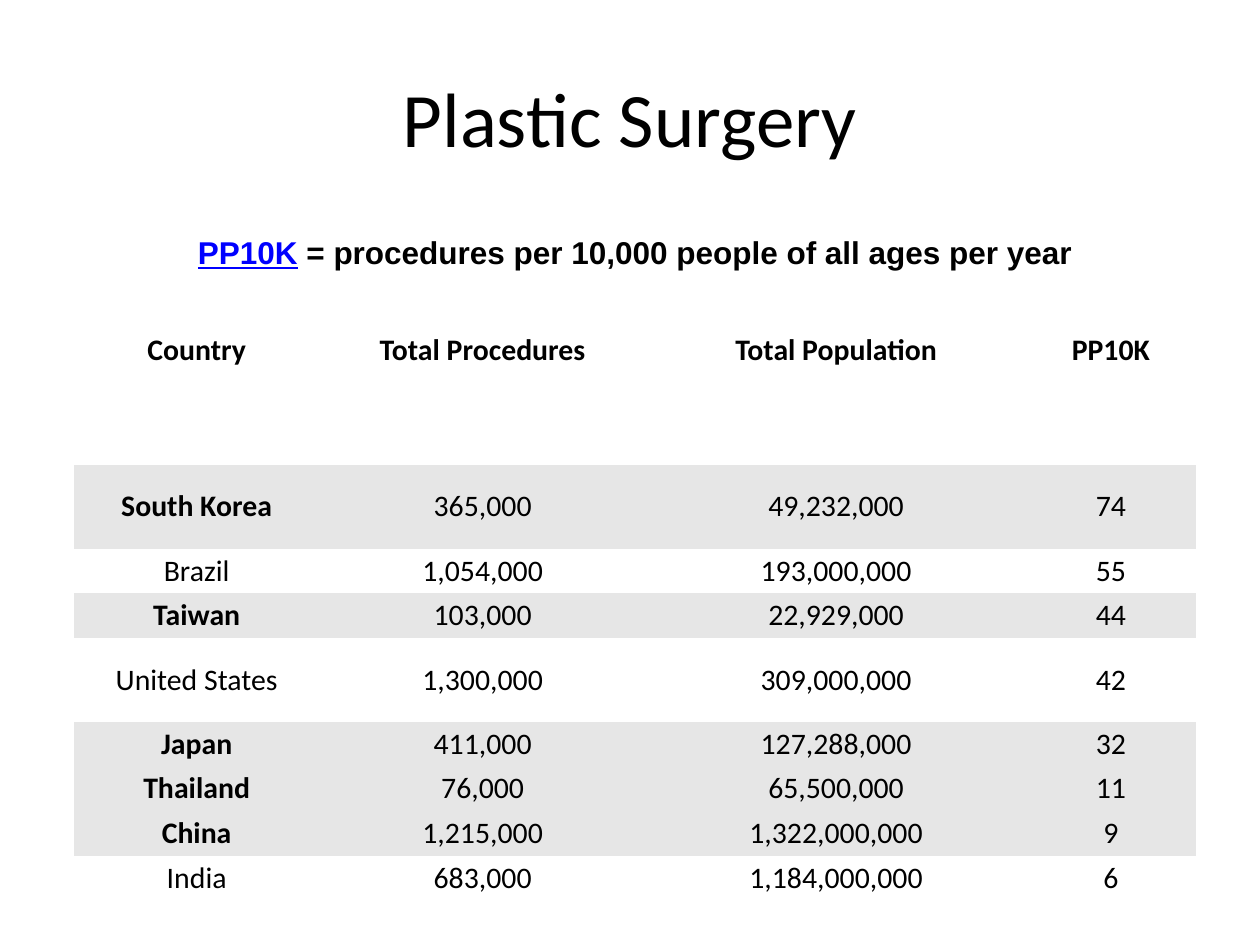
from pptx import Presentation
from pptx.dml.color import RGBColor
from pptx.enum.text import MSO_ANCHOR, PP_ALIGN
from pptx.util import Cm, Pt

BLACK = RGBColor(0x00, 0x00, 0x00)
BLUE = RGBColor(0x00, 0x00, 0xFF)
GREY = RGBColor(0xE6, 0xE6, 0xE6)
NO_STYLE_NO_GRID = "{2D5ABB26-0587-4C30-8999-92F81FD0307C}"

HEADERS = ("Country", "Total Procedures", "Total Population", "PP10K")
# Country figures, then whether the row is highlighted
COUNTRIES = [
    (("South Korea", "365,000", "49,232,000", "74"), True),
    (("Brazil", "1,054,000", "193,000,000", "55"), False),
    (("Taiwan", "103,000", "22,929,000", "44"), True),
    (("United States", "1,300,000", "309,000,000", "42"), False),
    (("Japan", "411,000", "127,288,000", "32"), True),
    (("Thailand", "76,000", "65,500,000", "11"), True),
    (("China", "1,215,000", "1,322,000,000", "9"), True),
    (("India", "683,000", "1,184,000,000", "6"), False),
]
TALL_COUNTRIES = ("South Korea", "United States")
COLUMN_WIDTHS = (4.93, 6.6, 7.65, 3.43)
TALL_ROW, HEADER_ROW, LOW_ROW = 1.69, 3.24, 0.9
CELL_MARGIN, HEADER_TOP_MARGIN = 0.05, 0.56


class SlideBuilder:
    def __init__(self, slide):
        self.slide = slide

    def add_run(self, paragraph, text, size, font="Calibri", color=BLACK,
                bold=False, underline=False):
        run = paragraph.add_run()
        run.text = text
        run.font.name = font
        run.font.size = Pt(size)
        run.font.bold = bold
        run.font.underline = underline
        run.font.color.rgb = color

    def add_text(self, left, top, width, height):
        """Add a centred text box and return its paragraph."""
        box = self.slide.shapes.add_textbox(Cm(left), Cm(top), Cm(width), Cm(height))
        box.text_frame.word_wrap = True
        box.text_frame.vertical_anchor = MSO_ANCHOR.MIDDLE
        paragraph = box.text_frame.paragraphs[0]
        paragraph.alignment = PP_ALIGN.CENTER
        return paragraph

    def add_table(self, left, top, widths, heights):
        shape = self.slide.shapes.add_table(
            len(heights), len(widths), Cm(left), Cm(top),
            Cm(sum(widths)), Cm(sum(heights)))
        table = shape.table
        table.first_row = table.horz_banding = False
        shape._element.graphic.graphicData.tbl.tblPr.find(
            "{*}tableStyleId").text = NO_STYLE_NO_GRID
        for column, width in zip(table.columns, widths):
            column.width = Cm(width)
        for row, height in zip(table.rows, heights):
            row.height = Cm(height)
        return table

    def fill_cell(self, cell, text, bold=False, fill=None,
                  anchor=MSO_ANCHOR.MIDDLE, top_margin=CELL_MARGIN):
        cell.margin_left = cell.margin_right = cell.margin_bottom = Cm(CELL_MARGIN)
        cell.margin_top = Cm(top_margin)
        cell.vertical_anchor = anchor
        if fill is None:
            cell.fill.background()
        else:
            cell.fill.solid()
            cell.fill.fore_color.rgb = fill
        paragraph = cell.text_frame.paragraphs[0]
        paragraph.alignment = PP_ALIGN.CENTER
        self.add_run(paragraph, text, 17, bold=bold)


def main():
    presentation = Presentation()
    presentation.slide_width = Cm(25.4)
    presentation.slide_height = Cm(19.05)
    builder = SlideBuilder(
        presentation.slides.add_slide(presentation.slide_layouts[6]))

    # Title
    title = builder.add_text(1.27, 0.76, 22.86, 3.18)
    builder.add_run(title, "Plastic Surgery", 44)

    # Table with a merged, empty top row
    heights = [TALL_ROW, HEADER_ROW] + [
        TALL_ROW if values[0] in TALL_COUNTRIES else LOW_ROW
        for values, _ in COUNTRIES]
    table = builder.add_table(1.5, 4.44, COLUMN_WIDTHS, heights)
    table.cell(0, 0).merge(table.cell(0, len(HEADERS) - 1))
    for column, header in enumerate(HEADERS):
        builder.fill_cell(table.cell(1, column), header, bold=True,
                          anchor=MSO_ANCHOR.TOP, top_margin=HEADER_TOP_MARGIN)
    for row, (values, highlighted) in enumerate(COUNTRIES, start=2):
        for column, value in enumerate(values):
            builder.fill_cell(table.cell(row, column), value,
                              bold=highlighted and column == 0,
                              fill=GREY if highlighted else None)

    # Definition of the rate, over the empty row
    definition = builder.add_text(1.3, 4.57, 23.01, 1.02)
    builder.add_run(definition, "PP10K", 18, "Arial", BLUE, bold=True, underline=True)
    builder.add_run(definition, " = procedures per 10,000 people of all ages per year",
                    18, "Arial", bold=True)

    presentation.save("out.pptx")


if __name__ == "__main__":
    main()
